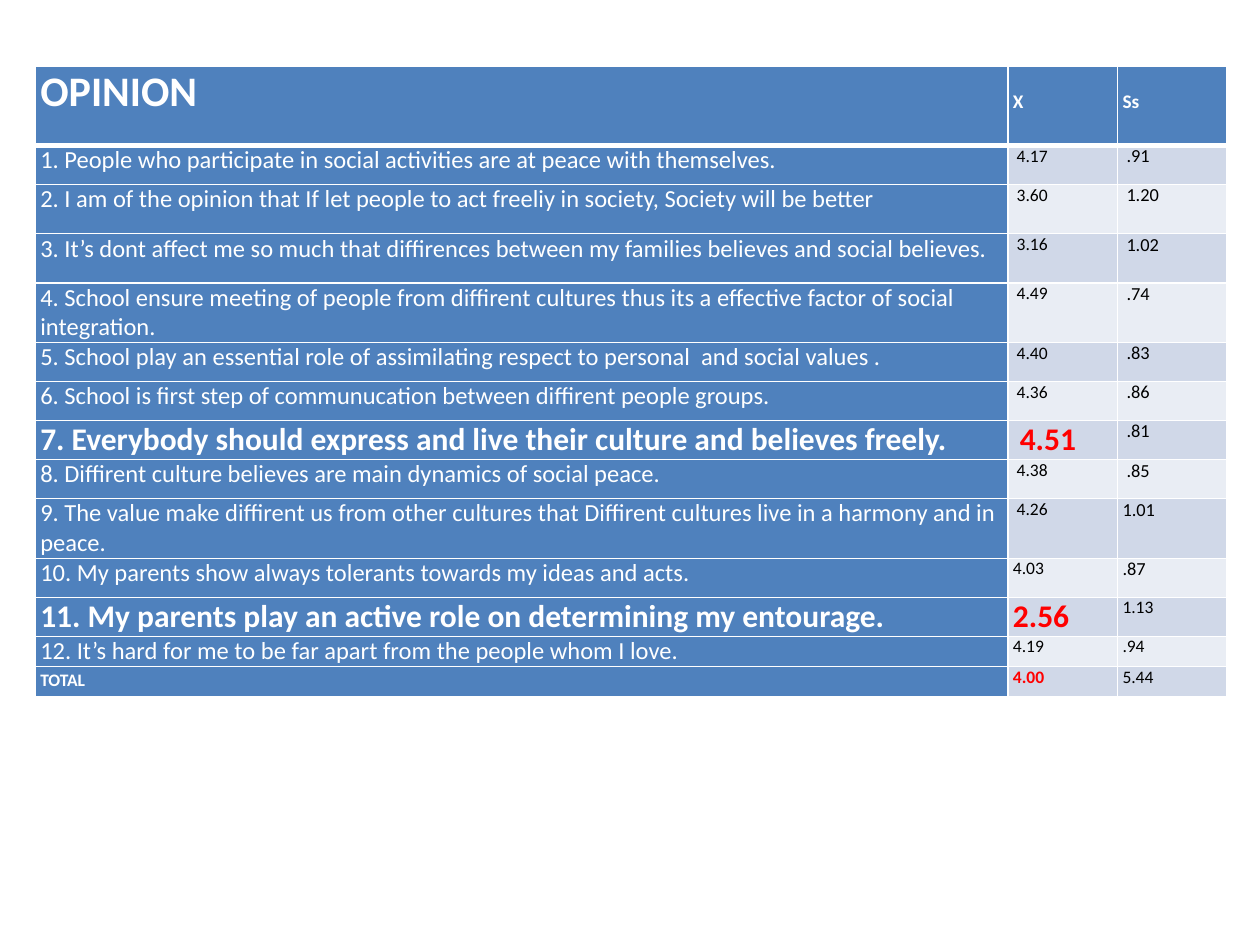
from dataclasses import dataclass, field

from lxml.etree import SubElement
from pptx import Presentation
from pptx.dml.color import RGBColor
from pptx.oxml.ns import qn
from pptx.util import Inches, Pt

WIDTH, HEIGHT = 10, 7.5
WHITE, BLACK, RED = "FFFFFF", "000000", "FF0000"
BLUE, BANDS = "4F81BD", ("D0D8E8", "E9EDF4")

OPINIONS = [
    ("1. People who participate in social activities are at peace with themselves.", "4.17", ".91"),
    ("2. I am of the opinion that If let people to act freeliy in society, Society will be better", "3.60", "1.20"),
    ("3. It’s dont affect me so much that diffirences between my families believes and social believes.", "3.16", "1.02"),
    ("4. School ensure meeting of people from diffirent cultures thus its a effective factor of social integration.", "4.49", ".74"),
    ("5. School play an essential role of assimilating respect to personal  and social values .", "4.40", ".83"),
    ("6. School is first step of communucation between diffirent people groups.", "4.36", ".86"),
    ("7. Everybody should express and live their culture and believes freely.", "4.51", ".81"),
    ("8. Diffirent culture believes are main dynamics of social peace.", "4.38", ".85"),
    ("9. The value make diffirent us from other cultures that Diffirent cultures live in a harmony and in peace.", "4.26", "1.01"),
    ("10. My parents show always tolerants towards my ideas and acts.", "4.03", ".87"),
    ("11. My parents play an active role on determining my entourage.", "2.56", "1.13"),
    ("12. It’s hard for me to be far apart from the people whom I love.", "4.19", ".94"),
    ("TOTAL", "4.00", "5.44"),
]
HIGHLIGHTED = (7, 11)
TOTAL = len(OPINIONS)
INDENTED_ROWS = (0, 9, 8)
COLUMN_SHARES = (0.772, 0.087, 0.087)
ROW_HEIGHTS = [0.63, 0.31] + [0.39] * 3 + [0.31] * 7 + [0.24] * 2


def color(value):
    """Return the colour for a hex string."""
    return RGBColor.from_string(value)


def assign(target, values):
    """Set each named attribute of the target."""
    for name, value in values.items():
        setattr(target, name, value)


def opinion_format(row, column):
    """Return the size, weight and colour of a body cell's text."""
    highlighted = row in HIGHLIGHTED
    if column == 0:
        size = 18 if highlighted else 10 if row == TOTAL else 14
        return {"size": size, "bold": highlighted or row == TOTAL, "ink": WHITE}
    if column == 1:
        strong = highlighted or row == TOTAL
        return {"size": 18 if highlighted else 10, "bold": strong, "ink": RED if strong else BLACK}
    return {"size": 10 if row >= 11 else 10.5, "bold": False, "ink": BLACK}


@dataclass
class Deck:
    """Hold the style and the current slide."""
    presentation: object = field(default_factory=Presentation)
    font: str = "Calibri"
    margin: float = 0.04
    slide: object = None

    def add_slide(self):
        """Start a blank slide."""
        assign(self.presentation, {"slide_width": Inches(WIDTH), "slide_height": Inches(HEIGHT)})
        self.slide = self.presentation.slides.add_slide(self.presentation.slide_layouts[6])

    def add_table(self, left, top, column_shares, row_heights):
        """Add a table placed by shares of the slide's size."""
        shape = self.slide.shapes.add_table(
            len(row_heights), len(column_shares),
            Inches(left * WIDTH), Inches(top * HEIGHT),
            Inches(sum(column_shares) * WIDTH), Inches(sum(row_heights)))
        table = shape.table
        table.first_col = True
        for column, share in zip(table.columns, column_shares):
            column.width = Inches(share * WIDTH)
        for row, height in zip(table.rows, row_heights):
            row.height = Inches(height)
        return table

    def add_borders(self, cell, bottom):
        """Draw white lines around a cell."""
        properties = cell._tc.get_or_add_tcPr()
        for side, width in {"L": 1, "R": 1, "T": 1, "B": bottom}.items():
            line = SubElement(properties, qn(f"a:ln{side}"), w=str(Pt(width)))
            SubElement(SubElement(line, qn("a:solidFill")), qn("a:srgbClr"), val=WHITE)

    def fill_cell(self, cell, text, fill, size, bold, ink, indent=0, drop=0, bottom=1):
        """Write and style one table cell."""
        self.add_borders(cell, bottom)
        cell.fill.solid()
        cell.fill.fore_color.rgb = color(fill)
        assign(cell, {
            "margin_left": Inches(self.margin + indent), "margin_right": Inches(self.margin),
            "margin_top": Inches(drop), "margin_bottom": 0})
        run = cell.text_frame.paragraphs[0].add_run()
        run.text = text
        assign(run.font, {"name": self.font, "size": Pt(size), "bold": bold})
        run.font.color.rgb = color(ink)


def main():
    """Build the opinion table and save it."""
    deck = Deck()
    deck.add_slide()
    table = deck.add_table(0.028, 0.07, COLUMN_SHARES, ROW_HEIGHTS)
    for column, (text, size, drop) in enumerate([("OPINION", 24, 0), ("X", 11, 0.19), ("Ss", 11, 0.19)]):
        deck.fill_cell(table.cell(0, column), text, BLUE, size, True, WHITE, drop=drop, bottom=3)
    for row, texts in enumerate(OPINIONS, 1):
        for column, text in enumerate(texts):
            style = opinion_format(row, column)
            indent = 0.003 * style["size"] if row <= INDENTED_ROWS[column] else 0
            fill = BANDS[(row - 1) % 2] if column else BLUE
            deck.fill_cell(table.cell(row, column), text, fill, indent=indent, **style)
    table.cell(TOTAL, 0).text_frame.paragraphs[0].line_spacing = 1.15
    deck.presentation.save("out.pptx")


if __name__ == "__main__":
    main()
